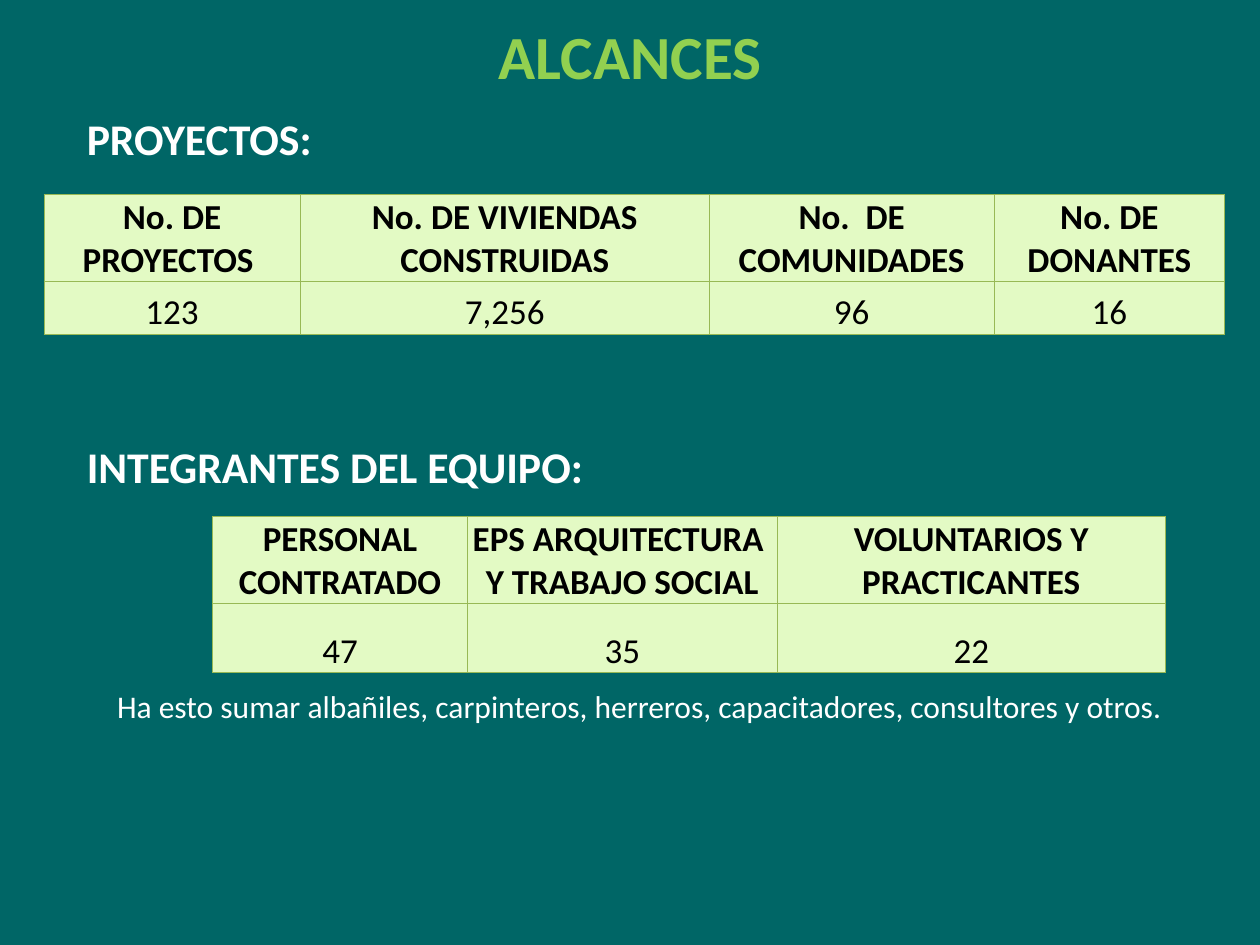
import pptx
import pptx.dml.color
import pptx.enum.text
import pptx.oxml
import pptx.oxml.ns
import pptx.util
from pptx.util import Cm

ALIGN = pptx.enum.text.PP_ALIGN
ANCHOR = pptx.enum.text.MSO_ANCHOR


def rgb(value):
    return pptx.dml.color.RGBColor.from_string(value)


class Deck:
    font = "Calibri"
    background, accent, light, dark = "006666", "92D050", "FFFFFF", "000000"
    cell_fill, border = "E3FAC4", "98B955"

    def __init__(self, prs):
        self.s = prs.slides.add_slide(prs.slide_layouts[6])
        self.s.background.fill.solid()
        self.s.background.fill.fore_color.rgb = rgb(self.background)

    def style(self, p, size, color, bold, align):
        p.alignment = align
        p.font.name = self.font
        p.font.size = pptx.util.Pt(size)
        p.font.bold = bold
        p.font.color.rgb = rgb(color)

    def text(self, text, left, top, width, height, size, color=light,
             bold=False, align=ALIGN.LEFT, anchor=ANCHOR.TOP):
        sp = self.s.shapes.add_textbox(Cm(left), Cm(top), Cm(width), Cm(height))
        tf = sp.text_frame
        tf.word_wrap = True
        tf.vertical_anchor = anchor
        tf.text = text
        self.style(tf.paragraphs[0], size, color, bold, align)

    def borders(self, cell):
        tc_pr = cell._tc.get_or_add_tcPr()
        for side in ("lnL", "lnR", "lnT", "lnB"):
            tc_pr.append(pptx.oxml.parse_xml(
                f'<a:{side} {pptx.oxml.ns.nsdecls("a")} w="9525"><a:solidFill>'
                f'<a:srgbClr val="{self.border}"/></a:solidFill></a:{side}>'))

    def table(self, rows, left, top, widths, heights):
        frame = self.s.shapes.add_table(len(rows), len(widths), Cm(left), Cm(top),
                                        Cm(sum(widths)), Cm(sum(heights)))
        table = frame.table
        for column, width in zip(table.columns, widths):
            column.width = Cm(width)
        for i, (row, height) in enumerate(zip(rows, heights)):
            table.rows[i].height = Cm(height)
            for j, text in enumerate(row):
                cell = table.cell(i, j)
                self.borders(cell)
                cell.fill.solid()
                cell.fill.fore_color.rgb = rgb(self.cell_fill)
                cell.margin_left = cell.margin_right = cell.margin_top = Cm(0.03)
                cell.margin_bottom = 0
                cell.vertical_anchor = ANCHOR.BOTTOM
                cell.text_frame.text = text
                for p in cell.text_frame.paragraphs:
                    self.style(p, 20, self.dark, i == 0, ALIGN.CENTER)


def main():
    prs = pptx.Presentation()
    prs.slide_width, prs.slide_height = Cm(25.4), Cm(19.05)
    deck = Deck(prs)

    # Title
    deck.text("ALCANCES", 1.27, 0.33, 22.86, 1.55, 35, deck.accent, True,
              ALIGN.CENTER, ANCHOR.MIDDLE)

    # Projects
    deck.text("PROYECTOS:", 1.5, 2.13, 9.4, 1.32, 25, bold=True)
    deck.table([["No. DE PROYECTOS ", "No. DE VIVIENDAS CONSTRUIDAS",
                 "No.  DE COMUNIDADES", "No. DE DONANTES"],
                ["123", "7,256", "96", "16"]],
               0.89, 3.92, [5.16, 8.25, 5.74, 4.65], [1.75, 1.07])

    # Team members
    deck.text("INTEGRANTES DEL EQUIPO:", 1.5, 8.74, 12.6, 1.32, 25, bold=True)
    deck.table([["PERSONAL CONTRATADO", "EPS ARQUITECTURA \nY TRABAJO SOCIAL",
                 "VOLUNTARIOS Y PRACTICANTES"],
                ["47", "35", "22"]],
               4.29, 10.41, [5.13, 6.25, 7.82], [1.75, 1.4])
    deck.text("Ha esto sumar albañiles, carpinteros, herreros, capacitadores, "
              "consultores y otros.", 2.11, 13.72, 22.4, 1.02, 18)

    prs.save("out.pptx")


if __name__ == "__main__":
    main()
